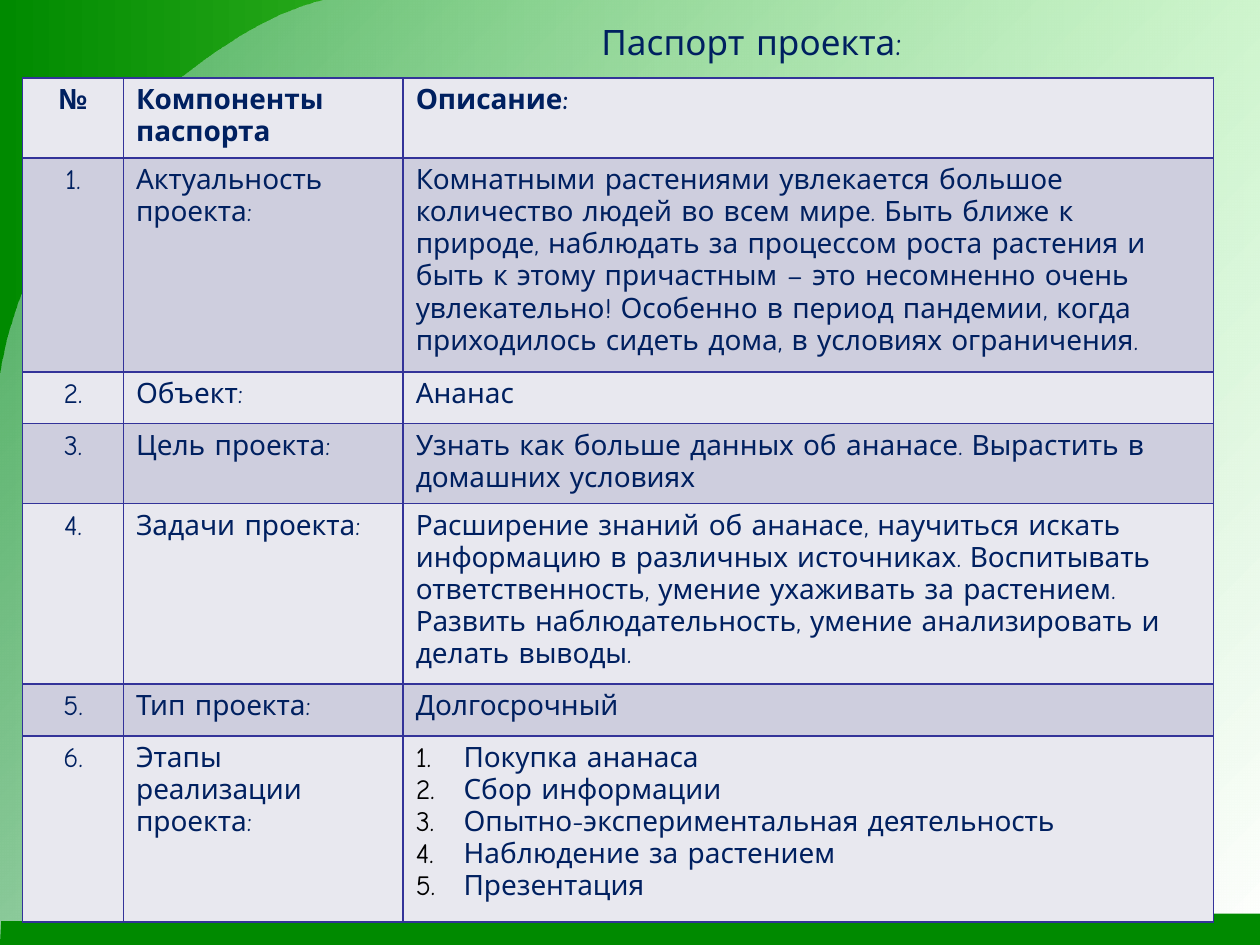
from dataclasses import dataclass

from lxml import etree
from pptx import Presentation
from pptx.dml.color import RGBColor
from pptx.enum.text import MSO_ANCHOR, PP_ALIGN
from pptx.oxml.ns import qn
from pptx.util import Inches, Pt

CENTER, LEFT = PP_ALIGN.CENTER, PP_ALIGN.LEFT
MIDDLE = MSO_ANCHOR.MIDDLE
CURVE_STEPS = 24


@dataclass(frozen=True)
class Theme:
    font: str = "Comic Neue"
    title_size: int = 20
    table_size: int = 16
    text: str = "002060"
    number: str = "000000"
    border: str = "333399"
    border_width: int = 1
    row_fills: tuple = ("E8E8EF", "CECEDE")
    green: str = "008A00"
    lime: str = "99FF66"
    white: str = "FFFFFF"
    mist: str = "BBE0E3"
    mist_opacity: int = 39


PANEL = [(2.58, 0), (1.9, 0.16, 1.16, 0.83, 0.98, 1.07),
         (0.8, 1.32, 0.16, 1.94, 0, 3.01), (0, 7.5), (10, 7.5), (10, 0)]
FOOTER = [(10, 7.25), (4.73, 7.25), (4.48, 7.25, 4.41, 7.25, 4.2, 7.26),
          (3.42, 7.3), (3.2, 7.31, 3.16, 7.31, 2.86, 7.31),
          (0.01, 7.31), (0, 7.5), (10, 7.5)]

COLUMN_WIDTHS = [0.8, 2.22, 6.43]
ROW_HEIGHTS = [0.45] + [0.41] * 5 + [1.48]
HEADER = ("№", "Компоненты паспорта", "Описание:")
PASSPORT = [
    ("Актуальность проекта:",
     "Комнатными растениями увлекается большое количество людей во всем мире. "
     "Быть ближе к природе, наблюдать за процессом роста растения и быть к этому "
     "причастным – это несомненно очень увлекательно! Особенно в период пандемии, "
     "когда приходилось сидеть дома, в условиях ограничения."),
    ("Объект:", "Ананас"),
    ("Цель проекта:",
     "Узнать как больше данных об ананасе. Вырастить в домашних условиях"),
    ("Задачи проекта:",
     "Расширение знаний об ананасе, научиться искать информацию в различных "
     "источниках. Воспитывать ответственность, умение ухаживать за растением. "
     "Развить наблюдательность, умение анализировать и делать выводы."),
    ("Тип проекта:", "Долгосрочный"),
    ("Этапы реализации проекта:",
     ["Покупка ананаса", "Сбор информации", "Опытно-экспериментальная деятельность",
      "Наблюдение за растением", "Презентация"]),
]


def outline_points(segments):
    """Turn points and cubic curves (two controls and an end) into points."""
    points = []
    for segment in segments:
        if len(segment) == 2:
            points.append(segment)
            continue
        start = points[-1]
        first, second, end = segment[:2], segment[2:4], segment[4:]
        for step in range(1, CURVE_STEPS + 1):
            t = step / CURVE_STEPS
            u = 1 - t
            points.append(tuple(
                u**3 * a + 3 * u * u * t * b + 3 * u * t * t * c + t**3 * d
                for a, b, c, d in zip(start, first, second, end)))
    return [(Inches(x), Inches(y)) for x, y in points]


class SlideBuilder:
    def __init__(self, slide, theme):
        self.slide = slide
        self.theme = theme

    def gradient(self, fill, colors, angle):
        fill.gradient()
        fill.gradient_angle = angle
        for stop, color in zip(fill.gradient_stops, colors):
            stop.color.rgb = RGBColor.from_string(color)
        return fill

    def background(self):
        self.gradient(self.slide.background.fill,
                      (self.theme.lime, self.theme.green), 180)

    def outline(self, segments):
        points = outline_points(segments)
        builder = self.slide.shapes.build_freeform(*points[0])
        builder.add_line_segments(points[1:], close=True)
        shape = builder.convert_to_shape()
        shape.shadow.inherit = False
        shape.line.fill.background()
        return shape

    def panel(self):
        shape = self.outline(PANEL)
        self.gradient(shape.fill, (self.theme.white, self.theme.mist), 135)
        last_color = list(shape.element.spPr.iter(qn("a:srgbClr")))[-1]
        etree.SubElement(last_color, qn("a:alpha"),
                         val=str(self.theme.mist_opacity * 1000))

    def footer(self):
        fill = self.outline(FOOTER).fill
        fill.solid()
        fill.fore_color.rgb = RGBColor.from_string(self.theme.green)

    def paragraph(self, paragraph, text, size, align=LEFT, bold=False, numbered=False):
        paragraph.text = text
        paragraph.alignment = align
        if numbered:
            self.number(paragraph)
        font = paragraph.font
        font.name = self.theme.font
        font.size = Pt(size)
        font.bold = bold
        font.color.rgb = RGBColor.from_string(self.theme.text)

    def number(self, paragraph):
        """Give the paragraph a hanging automatic number."""
        properties = paragraph._p.get_or_add_pPr()
        properties.set("marL", str(Inches(0.38)))
        properties.set("indent", str(-Inches(0.38)))
        color = etree.SubElement(properties, qn("a:buClr"))
        etree.SubElement(color, qn("a:srgbClr"), val=self.theme.number)
        etree.SubElement(properties, qn("a:buFont"), typeface=self.theme.font)
        etree.SubElement(properties, qn("a:buAutoNum"), type="arabicPeriod")

    def title(self, text):
        box = self.slide.shapes.add_textbox(
            Inches(2.85), Inches(0.13), Inches(6.23), Inches(0.4))
        frame = box.text_frame
        frame.word_wrap = True
        frame.vertical_anchor = MIDDLE
        self.paragraph(frame.paragraphs[0], text, self.theme.title_size, CENTER)

    def borders(self, cell):
        properties = cell._tc.get_or_add_tcPr()
        for position, side in enumerate(("a:lnL", "a:lnR", "a:lnT", "a:lnB")):
            line = etree.Element(qn(side), w=str(Pt(self.theme.border_width)))
            fill = etree.SubElement(line, qn("a:solidFill"))
            etree.SubElement(fill, qn("a:srgbClr"), val=self.theme.border)
            properties.insert(position, line)

    def cell(self, cell, content, fill, align, bold):
        cell.fill.solid()
        cell.fill.fore_color.rgb = RGBColor.from_string(fill)
        self.borders(cell)
        numbered = isinstance(content, list)
        frame = cell.text_frame
        for index, text in enumerate(content if numbered else [content]):
            paragraph = frame.add_paragraph() if index else frame.paragraphs[0]
            self.paragraph(paragraph, text, self.theme.table_size, align, bold, numbered)

    def table(self, rows):
        table = self.slide.shapes.add_table(
            len(rows), len(COLUMN_WIDTHS), Inches(0.18), Inches(0.62),
            Inches(sum(COLUMN_WIDTHS)), Inches(sum(ROW_HEIGHTS))).table
        for column, width in zip(table.columns, COLUMN_WIDTHS):
            column.width = Inches(width)
        for row_index, contents in enumerate(rows):
            table.rows[row_index].height = Inches(ROW_HEIGHTS[row_index])
            fill = self.theme.row_fills[row_index % 2]
            for column_index, content in enumerate(contents):
                self.cell(table.cell(row_index, column_index), content, fill,
                          LEFT if column_index else CENTER, row_index == 0)


def main():
    presentation = Presentation()
    presentation.slide_width = Inches(10)
    presentation.slide_height = Inches(7.5)
    slide = presentation.slides.add_slide(presentation.slide_layouts[6])
    builder = SlideBuilder(slide, Theme())
    builder.background()
    builder.panel()
    builder.footer()
    builder.title("Паспорт проекта:")
    builder.table([HEADER] + [(f"{number}.", *row)
                              for number, row in enumerate(PASSPORT, start=1)])
    presentation.save("out.pptx")


if __name__ == "__main__":
    main()
